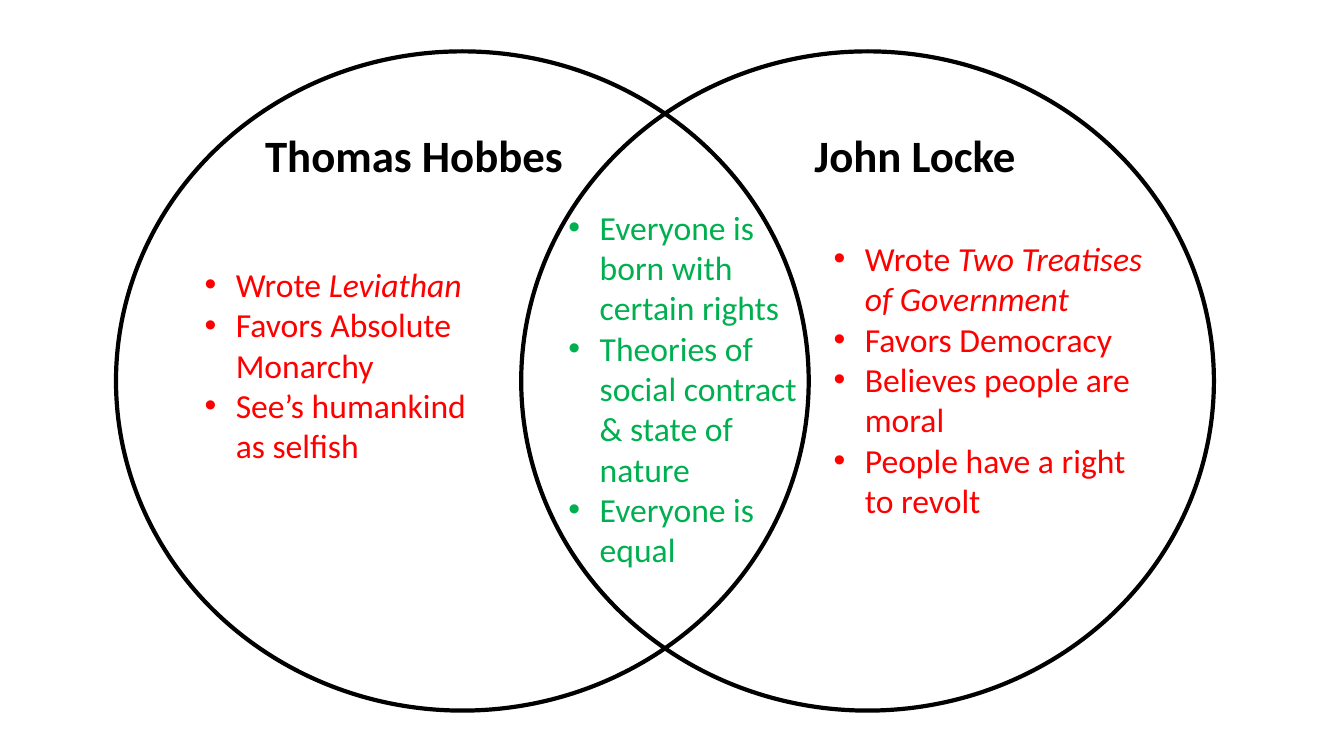
"""Build a Venn diagram slide comparing Thomas Hobbes and John Locke."""
from dataclasses import dataclass

import pptx
import pptx.dml.color
import pptx.enum.shapes
import pptx.enum.text
import pptx.oxml.ns
import pptx.slide
import pptx.text.text
import pptx.util
from lxml import etree

COLORS = {"ink": "000000", "difference": "FF0000", "shared": "00B050"}
FONT = "Calibri"
WIDTH, HEIGHT = pptx.util.Inches(13.33), pptx.util.Inches(7.5)
INDENT = pptx.util.Inches(0.31)


@dataclass(frozen=True)
class Box:
    """A rectangle in percent of the slide's width and height."""
    x: float
    y: float
    w: float
    h: float

    def emu(self) -> tuple[int, int, int, int]:
        """Return left, top, width and height in EMU."""
        return (int(WIDTH * self.x / 100), int(HEIGHT * self.y / 100),
                int(WIDTH * self.w / 100), int(HEIGHT * self.h / 100))


@dataclass(frozen=True)
class Line:
    """A paragraph with an optional italic title at its end."""
    text: str
    title: str = ""


@dataclass(frozen=True)
class Points:
    """A bulleted list in one region of the diagram."""
    box: Box
    color: str
    lines: tuple[Line, ...]


CIRCLES = [Box(x, 6.8, 51.54, 87.2) for x in (8.63, 38.78)]

HEADINGS = {
    "Thomas Hobbes": Box(18.98, 16.27, 23.86, 8.53),
    "John Locke": Box(59.86, 16.27, 19.88, 8.53),
}

REGIONS = [
    Points(Box(41.56, 26.67, 20.48, 59.2), "shared", (
        Line("Everyone is born with certain rights"),
        Line("Theories of social contract & state of nature"),
        Line("Everyone is equal"))),
    Points(Box(14.48, 34.27, 22.21, 32.27), "difference", (
        Line("Wrote ", "Leviathan"),
        Line("Favors Absolute Monarchy"),
        Line("See’s humankind as selfish"))),
    Points(Box(61.29, 30.8, 24.68, 39.07), "difference", (
        Line("Wrote ", "Two Treatises of Government"),
        Line("Favors Democracy"),
        Line("Believes people are moral"),
        Line("People have a right to revolt"))),
]


def rgb(name: str) -> pptx.dml.color.RGBColor:
    """Look up a named colour."""
    return pptx.dml.color.RGBColor.from_string(COLORS[name])


def add_circle(s: pptx.slide.Slide, box: Box) -> None:
    """Draw one unfilled circle of the diagram."""
    sp = s.shapes.add_shape(pptx.enum.shapes.MSO_SHAPE.OVAL, *box.emu())
    sp.shadow.inherit = False
    sp.fill.background()
    sp.line.color.rgb = rgb("ink")
    sp.line.width = pptx.util.Pt(3)


def add_bullet(p: pptx.text.text._Paragraph) -> None:
    """Give a paragraph a round bullet with a hanging indent."""
    ppr = p._p.get_or_add_pPr()
    ppr.set("marL", str(INDENT))
    ppr.set("indent", str(-INDENT))
    etree.SubElement(ppr, pptx.oxml.ns.qn("a:buFont"), typeface="Arial")
    etree.SubElement(ppr, pptx.oxml.ns.qn("a:buChar"), char="•")


def add_text(s: pptx.slide.Slide, box: Box, lines: tuple[Line, ...], *,
             size: int = 24, color: str = "ink", bold: bool = False,
             bullets: bool = False) -> None:
    """Place a text box with one paragraph per line."""
    tf = s.shapes.add_textbox(*box.emu()).text_frame
    tf.word_wrap = True
    tf.auto_size = pptx.enum.text.MSO_AUTO_SIZE.SHAPE_TO_FIT_TEXT
    for i, line in enumerate(lines):
        p = tf.add_paragraph() if i else tf.paragraphs[0]
        if bullets:
            add_bullet(p)
        for text, italic in ((line.text, False), (line.title, True)):
            if text:
                r = p.add_run()
                r.text = text
                r.font.name = FONT
                r.font.size = pptx.util.Pt(size)
                r.font.bold = bold
                r.font.italic = italic
                r.font.color.rgb = rgb(color)


def main() -> None:
    """Build and save the slide."""
    prs = pptx.Presentation()
    prs.slide_width, prs.slide_height = WIDTH, HEIGHT
    s = prs.slides.add_slide(prs.slide_layouts[6])
    for box in CIRCLES:
        add_circle(s, box)
    for name, box in HEADINGS.items():
        add_text(s, box, (Line(name),), size=32, bold=True)
    for region in REGIONS:
        add_text(s, region.box, region.lines, color=region.color, bullets=True)
    prs.save("out.pptx")


if __name__ == "__main__":
    main()
